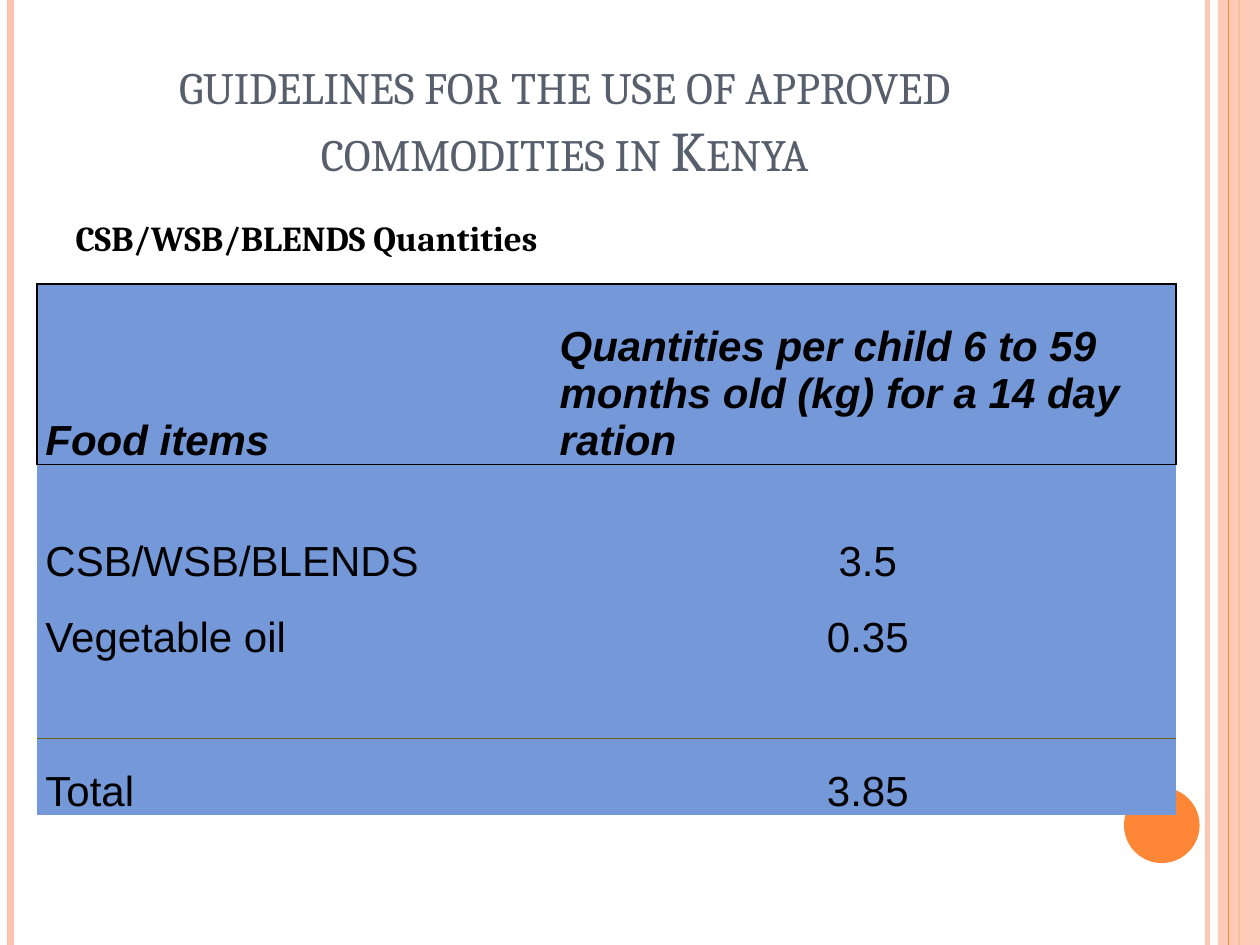
from typing import NamedTuple, Optional

from lxml import etree
from pptx import Presentation
from pptx.dml.color import RGBColor
from pptx.enum import shapes, text
from pptx.oxml import ns
from pptx.util import Pt

WHITE = RGBColor(0xFF, 0xFF, 0xFF)
BLACK = RGBColor(0, 0, 0)
PEACH = RGBColor(0xFE, 0xC3, 0xAE)
ORANGE = RGBColor(0xFE, 0x86, 0x37)
SLATE = RGBColor(0x57, 0x5F, 0x6D)
BLUE = RGBColor(0x75, 0x98, 0xD9)
OLIVE = RGBColor(0x6F, 0x5F, 0x13)
NO_STYLE = "{2D5ABB26-0587-4C30-8999-92F81FD0307C}"
JUSTIFY, LEFT, CENTER = text.PP_ALIGN.JUSTIFY, text.PP_ALIGN.LEFT, text.PP_ALIGN.CENTER
BLENDED_FOODS = "CSB/WSB/BLENDS"


class Stripe(NamedTuple):
    x: float
    width: float
    color: RGBColor
    opacity: Optional[int] = None


class Block(NamedTuple):
    shape: shapes.MSO_SHAPE
    left: float
    top: float
    width: float
    height: float
    color: RGBColor
    opacity: Optional[int] = None


class Ration(NamedTuple):
    food: str
    quantity: str
    height: float
    borders: dict
    header: bool = False


STRIPES_BEHIND = [
    Stripe(690, 3, PEACH, 93),
    Stripe(6, 4.5, PEACH),
    Stripe(708, 1.5, ORANGE),
]
SIDE_BAND = Block(shapes.MSO_SHAPE.RECTANGLE, 696, 0, 24, 540, PEACH, 87)
STRIPE_IN_FRONT = Stripe(702, 0.75, ORANGE)
DISC = Block(shapes.MSO_SHAPE.OVAL, 642.3, 450, 43.2, 43.2, ORANGE)

RATIONS = [
    Ration("Food items", "Quantities per child 6 to 59 months old (kg) for a 14 day ration",
           103, {"T": BLACK, "B": BLACK}, True),
    Ration(BLENDED_FOODS, "3.5", 69, {"T": BLACK}),
    Ration("Vegetable oil", "0.35", 43.8, {}),
    Ration("", "", 43.8, {"B": OLIVE}),
    Ration("Total", "3.85", 43.8, {"T": OLIVE}),
]


def set_opacity(properties, percent: Optional[int]) -> None:
    if percent is not None:
        color = properties.find(".//" + ns.qn("a:srgbClr"))
        etree.SubElement(color, ns.qn("a:alpha")).set("val", str(percent * 1000))


def draw_stripe(slide, stripe: Stripe) -> None:
    line = slide.shapes.add_connector(
        shapes.MSO_CONNECTOR.STRAIGHT, Pt(stripe.x), 0, Pt(stripe.x), Pt(540))
    line.line.width = Pt(stripe.width)
    line.line.color.rgb = stripe.color
    properties = line._element.spPr
    set_opacity(properties, stripe.opacity)
    etree.SubElement(properties, ns.qn("a:effectLst"))


def draw_block(slide, block: Block) -> None:
    shape = slide.shapes.add_shape(
        block.shape, Pt(block.left), Pt(block.top), Pt(block.width), Pt(block.height))
    shape.shadow.inherit = False
    shape.fill.solid()
    shape.fill.fore_color.rgb = block.color
    shape.line.fill.background()
    set_opacity(shape._element.spPr, block.opacity)


def place(holder, left: float, top: float, width: float, height: float) -> None:
    holder.left, holder.top = Pt(left), Pt(top)
    holder.width, holder.height = Pt(width), Pt(height)
    holder.text_frame.auto_size = text.MSO_AUTO_SIZE.NONE


def add_run(paragraph, wording: str, font: str, size: float, color: RGBColor,
            bold: bool = False, italic: bool = False):
    run = paragraph.add_run()
    run.text = wording
    run.font.name, run.font.size = font, Pt(size)
    run.font.color.rgb = color
    run.font.bold, run.font.italic = bold, italic
    return run


def indent(paragraph, margin: float, first: float = 0):
    properties = paragraph._p.get_or_add_pPr()
    properties.set("marL", str(Pt(margin)))
    properties.set("indent", str(Pt(first)))
    return properties


def draw_border(cell, side: str, color: Optional[RGBColor]) -> None:
    line = etree.SubElement(cell._tc.get_or_add_tcPr(), ns.qn("a:ln" + side), w=str(Pt(1)))
    if color is None:
        etree.SubElement(line, ns.qn("a:noFill"))
    else:
        fill = etree.SubElement(line, ns.qn("a:solidFill"))
        etree.SubElement(fill, ns.qn("a:srgbClr"), val=str(color))


def fill_cell(cell, wording: str, ration: Ration, margin: float, align, outer: str) -> None:
    borders = dict(ration.borders)
    if ration.header:
        borders[outer] = BLACK
    for side in "LRTB":
        draw_border(cell, side, borders.get(side))
    cell.fill.solid()
    cell.fill.fore_color.rgb = BLUE
    if not wording:
        return
    cell.vertical_anchor = text.MSO_ANCHOR.BOTTOM
    cell.margin_left = cell.margin_right = cell.margin_top = cell.margin_bottom = 0
    paragraph = cell.text_frame.paragraphs[0]
    paragraph.alignment = align
    indent(paragraph, margin)
    add_run(paragraph, wording, "Arial", 24, BLACK, ration.header, ration.header)


def draw_rations(slide) -> None:
    frame = slide.shapes.add_table(
        len(RATIONS), 2, Pt(21), Pt(162.3), Pt(651), Pt(sum(r.height for r in RATIONS)))
    table = frame.table
    table.first_row = table.horz_banding = False
    table._tbl.tblPr.find(ns.qn("a:tableStyleId")).text = NO_STYLE
    table.columns[0].width, table.columns[1].width = Pt(224.6), Pt(426.4)
    for index, ration in enumerate(RATIONS):
        table.rows[index].height = Pt(ration.height)
        fill_cell(table.cell(index, 0), ration.food, ration, 5, JUSTIFY, "L")
        fill_cell(table.cell(index, 1), ration.quantity, ration, 74.2,
                  LEFT if ration.header else CENTER, "R")


def write_title(title) -> None:
    place(title, 21, 21.6, 603.4, 90)
    frame = title.text_frame
    frame.vertical_anchor = text.MSO_ANCHOR.BOTTOM
    frame.margin_bottom = Pt(7.2)
    heading = frame.paragraphs[0]
    heading.alignment = CENTER
    run = add_run(heading, "guidelines for the use of approved commodities in Kenya",
                  "Cambria", 32, SLATE)
    run.font._element.set("cap", "small")


def write_subject(body) -> None:
    place(body, 36, 120, 588, 384)
    subject = body.text_frame.paragraphs[0]
    subject.space_before = Pt(6)
    etree.SubElement(indent(subject, 21.6, -21.6), ns.qn("a:buNone"))
    add_run(subject, f"{BLENDED_FOODS} Quantities", "Cambria", 20, BLACK, True)


def main() -> None:
    deck = Presentation()
    deck.slide_width, deck.slide_height = Pt(720), Pt(540)
    slide = deck.slides.add_slide(deck.slide_layouts[1])
    slide.background.fill.solid()
    slide.background.fill.fore_color.rgb = WHITE
    for stripe in STRIPES_BEHIND:
        draw_stripe(slide, stripe)
    draw_block(slide, SIDE_BAND)
    draw_stripe(slide, STRIPE_IN_FRONT)
    draw_block(slide, DISC)
    write_title(slide.shapes.title)
    write_subject(slide.placeholders[1])
    draw_rations(slide)
    deck.save("out.pptx")


if __name__ == "__main__":
    main()
